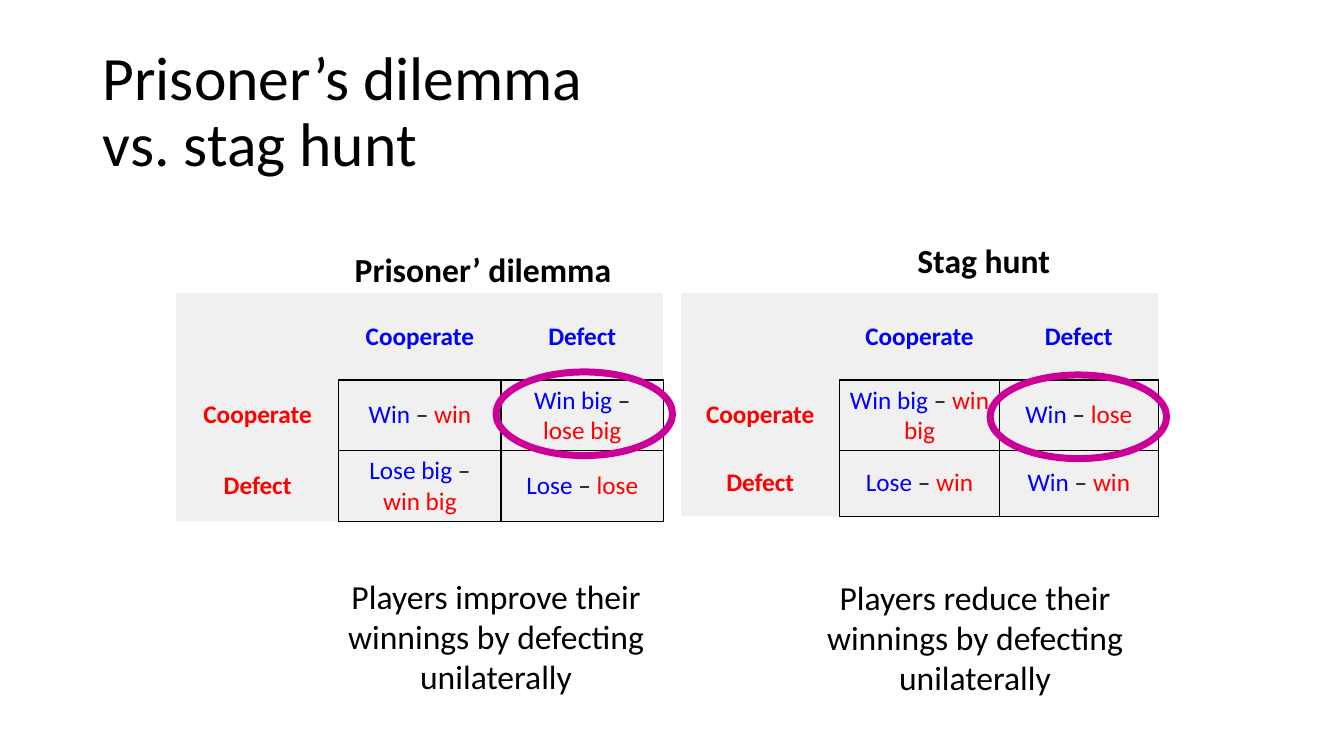
"""Build the slide comparing the prisoner's dilemma with the stag hunt."""
from lxml.etree import SubElement as Sub
from pptx import Presentation
from pptx.dml.color import RGBColor
from pptx.enum.shapes import MSO_SHAPE as Shape
from pptx.enum.text import MSO_ANCHOR as Anchor, MSO_AUTO_SIZE as Auto, PP_ALIGN as Align
from pptx.oxml.ns import qn
from pptx.util import Pt

PX = 9144
BLACK = RGBColor(0x00, 0x00, 0x00)
BLUE = RGBColor(0x00, 0x00, 0xFF)
RED = RGBColor(0xFF, 0x00, 0x00)
GREY = RGBColor(0xF0, 0xF0, 0xF0)
PINK = RGBColor(0xCC, 0x00, 0x99)


def write(frame, runs, size, bold=False, align=Align.LEFT):
    para = frame.paragraphs[0]
    para.alignment = align
    for text, color in runs:
        run = para.add_run()
        run.text = text
        style = {"name": "Calibri", "size": Pt(size), "bold": bold}
        for key, value in style.items():
            setattr(run.font, key, value)
        run.font.color.rgb = color
    return para


def add_text(box, text, size, form, **style):
    frame = slide.shapes.add_textbox(*(n * PX for n in box)).text_frame
    for key, value in form.items():
        setattr(frame, key, value)
    lines = text.split("\n")
    para = write(frame, [(lines[0], BLACK)], size, **style)
    for line in lines[1:]:
        para.add_line_break()
        write(frame, [(line, BLACK)], size, **style)
    return para


deck = Presentation()
deck.slide_width, deck.slide_height = 1333 * PX, 750 * PX
slide = deck.slides.add_slide(deck.slide_layouts[6])

TITLE = {"word_wrap": True, "vertical_anchor": Anchor.MIDDLE}
LABEL = {"word_wrap": False, "auto_size": Auto.SHAPE_TO_FIT_TEXT}
NOTE = {"word_wrap": True, "auto_size": Auto.SHAPE_TO_FIT_TEXT}
title = add_text((92, 40, 1150, 145), "Prisoner’s dilemma \nvs. stag hunt", 44, TITLE)
title.line_spacing = 0.9

MOVES = ["Cooperate", "Defect"]
ROWS = [86, 65, 65]
GAMES = [
    {"name": "Prisoner’ dilemma", "label": (342, 242, 277, 50),
     "left": 175, "col": 161, "ring": (492, 369), "note": (317, 566), "verb": "improve",
     "pays": [["Win – win", "Win big – lose big"], ["Lose big – win big", "Lose – lose"]]},
    {"name": "Stag hunt", "label": (900, 233, 153, 50),
     "left": 675, "col": 158, "ring": (982, 372), "note": (792, 567), "verb": "reduce",
     "pays": [["Win big – win big", "Win – lose"], ["Lose – win", "Win – win"]]},
]

for game in GAMES:
    wide = game["col"]
    grid = slide.shapes.add_table(
        3, 3, game["left"] * PX, 291 * PX, 3 * wide * PX, sum(ROWS) * PX).table
    grid.first_row = grid.horz_banding = False
    for col in grid.columns:
        col.width = wide * PX
    for row, high in zip(grid.rows, ROWS):
        row.height = high * PX

    for i in range(3):
        for j in range(3):
            cell = grid.cell(i, j)
            cell.vertical_anchor = Anchor.MIDDLE
            cell.fill.solid()
            cell.fill.fore_color.rgb = GREY
            if i and j:
                mine, yours = game["pays"][i - 1][j - 1].split("– ")
                runs = [(mine, BLUE), ("– ", BLACK), (yours, RED)]
            elif i:
                runs = [(MOVES[i - 1], RED)]
            elif j:
                runs = [(MOVES[j - 1], BLUE)]
            else:
                runs = []
            write(cell.text_frame, runs, 18, not (i and j), Align.CENTER)

            props = cell._tc.get_or_add_tcPr()
            sides = {"lnL": i and j, "lnR": i, "lnT": i and j, "lnB": j}
            for spot, (side, shown) in enumerate(sides.items()):
                line = Sub(props, qn("a:" + side), w=str(Pt(1)))
                if shown:
                    Sub(Sub(line, qn("a:solidFill")), qn("a:srgbClr"), val=str(BLACK))
                else:
                    Sub(line, qn("a:noFill"))
                props.insert(spot, line)

    add_text(game["label"], game["name"], 24, LABEL, bold=True)
    x, y = game["ring"]
    ring = slide.shapes.add_shape(Shape.OVAL, x * PX, y * PX, 175 * PX, 83 * PX)
    ring.shadow.inherit = False
    ring.fill.background()
    ring.line.color.rgb = PINK
    ring.line.width = Pt(5)
    add_text((*game["note"], 350, 131),
             f"Players {game['verb']} their winnings by defecting unilaterally",
             24, NOTE, align=Align.CENTER)

deck.save("out.pptx")
